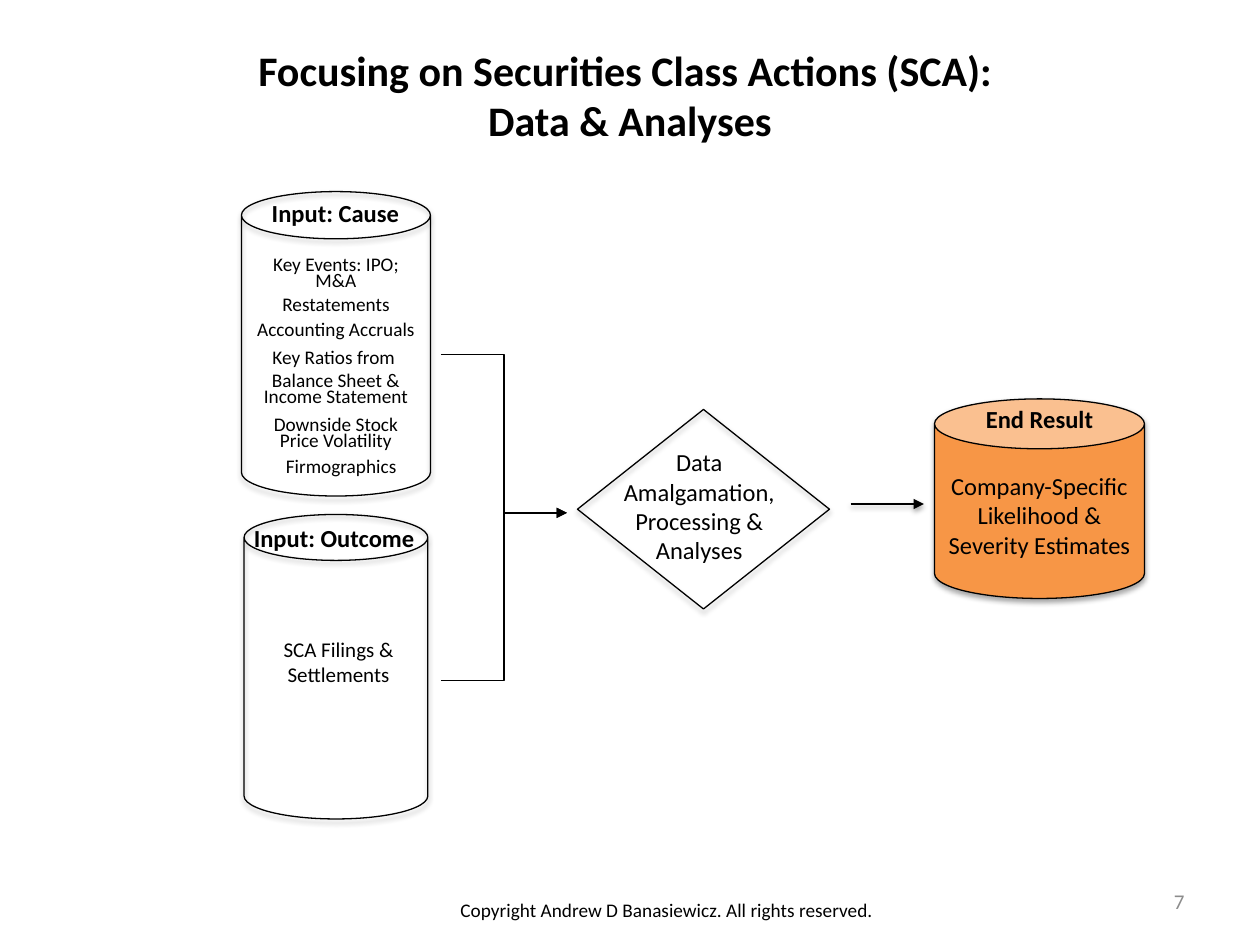
from lxml import etree
from pptx import Presentation
from pptx.dml.color import RGBColor
from pptx.enum.shapes import MSO_CONNECTOR, MSO_SHAPE
from pptx.enum.text import MSO_ANCHOR, MSO_AUTO_SIZE, PP_ALIGN
from pptx.oxml.ns import qn
from pptx.util import Inches, Pt

CAN, DIAMOND = MSO_SHAPE.CAN, MSO_SHAPE.DIAMOND
STRAIGHT, ELBOW = MSO_CONNECTOR.STRAIGHT, MSO_CONNECTOR.ELBOW
LEFT, CENTER, RIGHT = PP_ALIGN.LEFT, PP_ALIGN.CENTER, PP_ALIGN.RIGHT
TOP, MIDDLE = MSO_ANCHOR.TOP, MSO_ANCHOR.MIDDLE
TITLE_ONLY = 5
COLORS = {"ink": "000000", "result": "F79646", "page_number": "8C8C8C"}
FONT = "Calibri"
WIDTH, HEIGHT = Inches(10), Inches(7.5)
COLUMNS, ROWS = 120, 90


class Diagram:
    """Draws on one slide, measured on a grid of 120 columns by 90 rows."""

    def __init__(self, slide):
        self.slide = slide

    def box(self, left, top, width, height):
        return (round(left * WIDTH / COLUMNS), round(top * HEIGHT / ROWS),
                round(width * WIDTH / COLUMNS), round(height * HEIGHT / ROWS))

    def color(self, name):
        return RGBColor.from_string(COLORS[name])

    def fill_text(self, frame, lines, size, bold=False, align=CENTER,
                  color="ink", spacings=(), anchor=TOP):
        frame_format = {"word_wrap": True, "auto_size": MSO_AUTO_SIZE.NONE,
                        "vertical_anchor": anchor}
        for name, value in frame_format.items():
            setattr(frame, name, value)
        font_format = {"name": FONT, "size": Pt(size), "bold": bold}
        for index, line in enumerate(lines):
            paragraph = frame.add_paragraph() if index else frame.paragraphs[0]
            paragraph.alignment = align
            if spacings:
                paragraph.line_spacing = spacings[index]
            run = paragraph.add_run()
            run.text = line
            for name, value in font_format.items():
                setattr(run.font, name, value)
            run.font.color.rgb = self.color(color)

    def title(self, lines, box):
        title = self.slide.shapes.title
        title.left, title.top, title.width, title.height = self.box(*box)
        self.fill_text(title.text_frame, lines, 24, bold=True)

    def text(self, lines, box, size, **style):
        text_box = self.slide.shapes.add_textbox(*self.box(*box))
        self.fill_text(text_box.text_frame, lines, size, **style)

    def outline(self, item):
        item.line.color.rgb = self.color("ink")
        item.line.width = Pt(0.75)

    def drop_shadow(self, item, opacity):
        """Add a soft shadow straight below; zero opacity means no shadow."""
        properties = item._element.spPr
        effects = etree.SubElement(properties, qn("a:effectLst"))
        if opacity:
            shadow = etree.SubElement(
                effects, qn("a:outerShdw"), blurRad=str(Pt(3.1)),
                dist=str(Pt(1.8)), dir="5400000", rotWithShape="0")
            color = etree.SubElement(shadow, qn("a:srgbClr"), val=COLORS["ink"])
            etree.SubElement(color, qn("a:alpha"), val=str(opacity * 1000))

    def shape(self, kind, box, fill=None):
        shape = self.slide.shapes.add_shape(kind, *self.box(*box))
        if fill:
            shape.fill.solid()
            shape.fill.fore_color.rgb = self.color(fill)
        else:
            shape.fill.background()
        self.outline(shape)
        self.drop_shadow(shape, 35)

    def arrow(self, kind, start, end, opacity=0):
        connector = self.slide.shapes.add_connector(
            kind, *self.box(*start, *end))
        self.outline(connector)
        etree.SubElement(connector.line._get_or_add_ln(), qn("a:tailEnd"),
                         type="triangle")
        self.drop_shadow(connector, opacity)


def main():
    presentation = Presentation()
    presentation.slide_width, presentation.slide_height = WIDTH, HEIGHT
    slide = presentation.slides.add_slide(
        presentation.slide_layouts[TITLE_ONLY])
    diagram = Diagram(slide)
    diagram.title(["Focusing on Securities Class Actions (SCA): ",
                   "Data & Analyses"], (6, 3.6, 108, 10.4))

    diagram.shape(DIAMOND, (55, 39, 24, 19))
    diagram.text(["Data Amalgamation, Processing & Analyses"],
                 (57, 42, 19.2, 12.5), 14)

    diagram.shape(CAN, (89, 38, 20, 19), fill="result")
    diagram.text(["Company-Specific Likelihood & Severity Estimates"],
                 (89, 44.25, 20, 9.7), 14)
    diagram.text(["End Result"], (91, 37.9, 16, 4), 14, bold=True)

    diagram.shape(CAN, (23, 18.25, 18, 29))
    diagram.shape(CAN, (23.25, 49, 17.5, 29))
    diagram.text(["Input: Cause"], (24.7, 18.25, 15, 4), 14,
                 bold=True, align=LEFT)
    diagram.text(["Input: Outcome"], (23, 49.2, 18, 4), 14,
                 bold=True, align=LEFT)

    tight = 0.7
    causes = [
        (["Key Events: IPO; M&A"], (23, 24, 18, 4.3), (tight,)),
        (["Restatements"], (24, 27.25, 16, 3.5), (1,)),
        (["Accounting Accruals"], (23, 30.25, 18, 2.8), (tight,)),
        (["Key Ratios from ", "Balance Sheet &", "Income Statement"],
         (23, 32.25, 18, 7.2), (1, 1, tight)),
        (["Downside Stock Price Volatility"], (23, 39.25, 18, 4.3), (tight,)),
        (["Firmographics"], (24, 43.3, 17, 2.9), (tight,)),
    ]
    for lines, box, spacings in causes:
        diagram.text(lines, box, 11, spacings=spacings)
    diagram.text(["SCA Filings & Settlements"], (23.75, 60, 17, 6), 12)

    for input_row in (33.8, 64.8):
        diagram.arrow(ELBOW, (42, input_row), (54, 48.85))
    diagram.arrow(STRAIGHT, (81, 48), (88, 48), opacity=38)

    diagram.text(["7"], (86, 83.4, 28, 4.8), 12, align=RIGHT,
                 color="page_number", anchor=MIDDLE)
    diagram.text(["Copyright Andrew D Banasiewicz. All rights reserved."],
                 (40, 85, 47, 3.5), 11)
    presentation.save("out.pptx")


if __name__ == "__main__":
    main()
